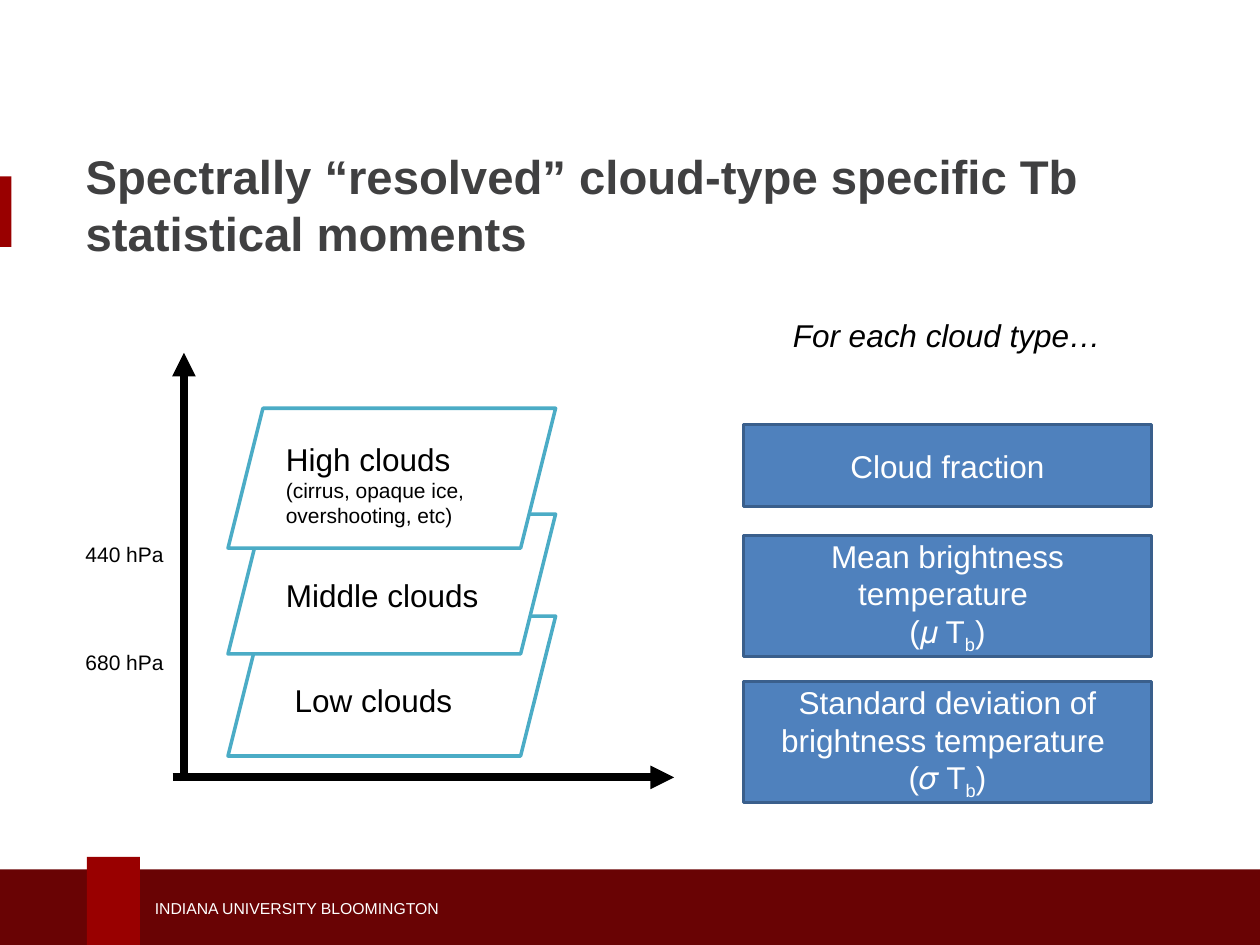
from lxml import etree
from pptx import Presentation, util as u
from pptx.dml.color import RGBColor
from pptx.enum import shapes, text
from pptx.oxml.ns import qn

COLORS = {
    "crimson": "990000", "maroon": "690304", "title": "404041",
    "teal": "4BACC6", "blue": "4F81BD", "navy": "3A5F8C",
    "white": "FFFFFF", "black": "000000",
}
SHAPE = shapes.MSO_SHAPE
ALIGN = text.PP_ALIGN
ANCHOR = text.MSO_ANCHOR


def rgb(name):
    return RGBColor.from_string(COLORS[name])


def inches(*values):
    return [u.Inches(v) for v in values]


class Deck:
    base = {"name": "Arial", "size": 18, "color": "black"}

    def __init__(self, prs):
        self.s = prs.slides.add_slide(prs.slide_layouts[5])

    def fill_text(self, sp, paragraphs, align=ALIGN.LEFT, anchor=ANCHOR.TOP, **fmt):
        tf = sp.text_frame
        tf.word_wrap = True
        tf.auto_size = text.MSO_AUTO_SIZE.NONE
        tf.vertical_anchor = anchor
        for i, runs in enumerate(paragraphs):
            p = tf.add_paragraph() if i else tf.paragraphs[0]
            p.alignment = align
            for words, extra in runs:
                r = p.add_run()
                r.text = words
                self.style(r, {**self.base, **fmt, **extra})

    def style(self, r, fmt):
        for key, value in fmt.items():
            if key == "color":
                r.font.color.rgb = rgb(value)
            elif key == "baseline":
                r._r.get_or_add_rPr().set("baseline", str(value * 1000))
            else:
                setattr(r.font, key, u.Pt(value) if key == "size" else value)

    def title(self, words, *at):
        sp = self.s.shapes.title
        sp.left, sp.top, sp.width, sp.height = inches(*at)
        self.fill_text(sp, [[(words, {})]], anchor=ANCHOR.MIDDLE,
                       size=27, bold=True, color="title")

    def label(self, paragraphs, *at, **fmt):
        sp = self.s.shapes.add_textbox(*inches(*at))
        self.fill_text(sp, paragraphs, **fmt)

    def shape(self, kind, fill, *at, line=None):
        sp = self.s.shapes.add_shape(kind, *inches(*at))
        sp.shadow.inherit = False
        sp.fill.solid()
        sp.fill.fore_color.rgb = rgb(fill)
        if line:
            sp.line.color.rgb = rgb(line)
            sp.line.width = u.Pt(2)
        else:
            sp.line.fill.background()
        return sp

    def box(self, paragraphs, *at):
        sp = self.shape(SHAPE.RECTANGLE, "blue", *at, line="navy")
        self.fill_text(sp, paragraphs, align=ALIGN.CENTER, anchor=ANCHOR.MIDDLE,
                       color="white")

    def arrow(self, *ends):
        c = self.s.shapes.add_connector(shapes.MSO_CONNECTOR.STRAIGHT, *inches(*ends))
        c.line.color.rgb = rgb("black")
        c.line.width = u.Pt(4.5)
        ln = c._element.spPr.find(qn("a:ln"))
        etree.SubElement(ln, qn("a:tailEnd"), type="triangle")
        etree.SubElement(c._element.spPr, qn("a:effectLst"))


def moment(words, symbol):
    return [
        [(words, {})],
        [("(", {}), (symbol, {}), (" T", {}), ("b", {"baseline": -25}), (")", {})],
    ]


def main():
    prs = Presentation()
    prs.slide_width, prs.slide_height = inches(10, 7.5)
    d = Deck(prs)

    d.shape(SHAPE.RECTANGLE, "crimson", 0, 1.4, 0.09, 0.56)
    d.shape(SHAPE.RECTANGLE, "maroon", 0, 6.9, 10, 0.6)
    d.shape(SHAPE.RECTANGLE, "crimson", 0.69, 6.8, 0.42, 0.7)
    d.label([[("INDIANA UNIVERSITY BLOOMINGTON", {})]], 1.13, 7.08, 3.95, 0.25,
            anchor=ANCHOR.MIDDLE, size=9, color="white")
    d.title("Spectrally “resolved” cloud-type specific Tb statistical moments",
            0.58, 1.11, 8.75, 1.02)

    for top in (4.89, 4.08, 3.24):
        d.shape(SHAPE.PARALLELOGRAM, "white", 1.81, top, 2.6, 1.11, line="teal")
    d.arrow(1.46, 6.2, 1.46, 2.8)
    d.arrow(1.37, 6.17, 5.35, 6.17)

    d.label([[("High clouds", {})],
             [("(cirrus, opaque ice, overshooting, etc)", {"size": 12})]],
            2.17, 3.44, 1.75, 0.81)
    d.label([[("Middle clouds", {})]], 2.17, 4.52, 1.75, 0.4)
    d.label([[("Low clouds", {})]], 2.24, 5.36, 1.75, 0.4)
    for words, top in (("440 hPa", 4.25), ("680 hPa", 5.11)):
        d.label([[(words, {})]], 0.58, top, 0.88, 0.3, size=12)

    d.label([[("For each cloud type…", {})]], 5.57, 2.46, 3.89, 0.4,
            align=ALIGN.CENTER, italic=True)
    boxes = (
        ([[("Cloud fraction", {})]], 3.37, 0.65),
        (moment("Mean brightness temperature ", "𝜇"), 4.25, 0.96),
        (moment("Standard deviation of brightness temperature ", "𝜎"), 5.41, 0.96),
    )
    for paragraphs, top, height in boxes:
        d.box(paragraphs, 5.9, top, 3.24, height)

    prs.save("out.pptx")


if __name__ == "__main__":
    main()
